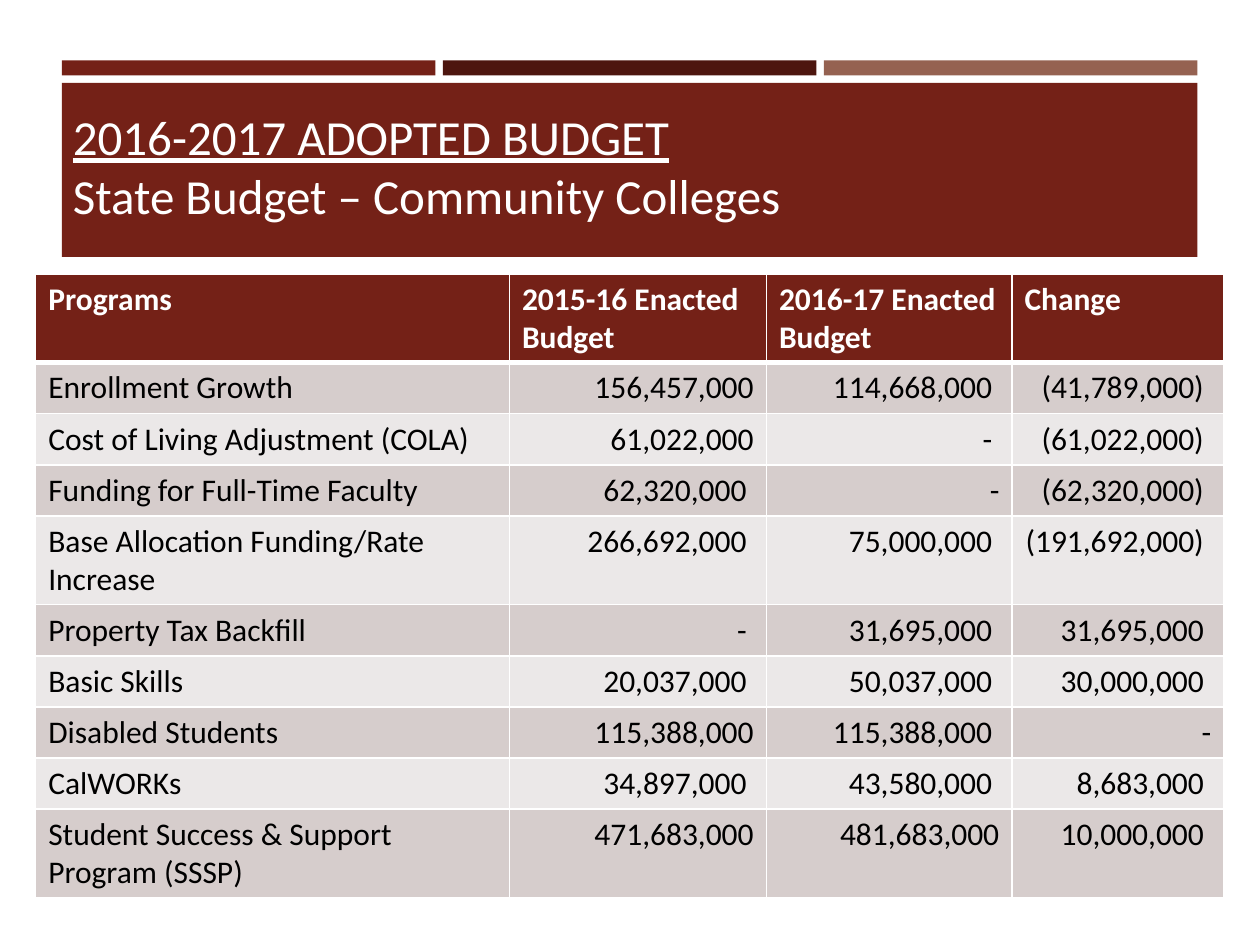
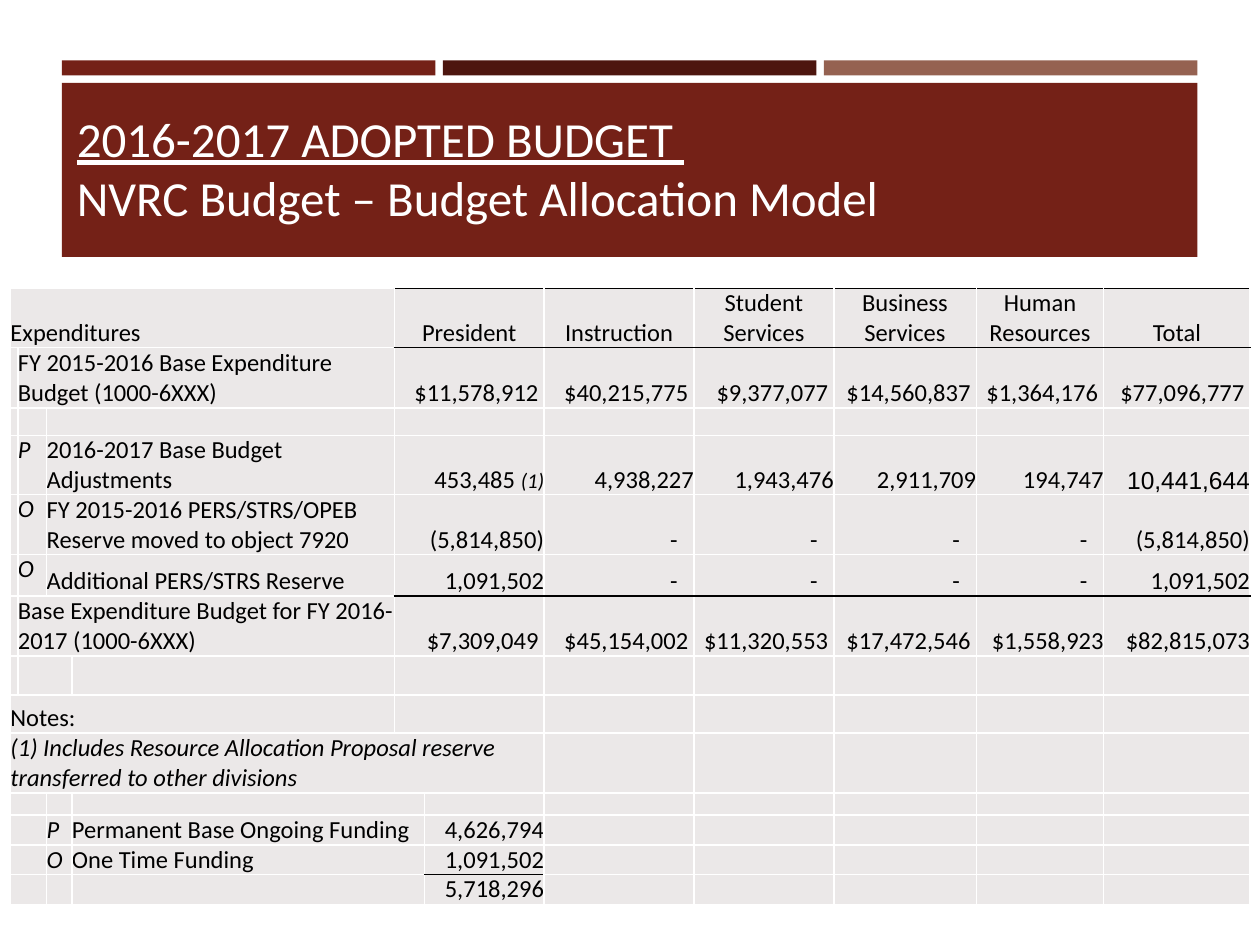
from dataclasses import dataclass
from lxml import etree
from pptx import Presentation
from pptx import util as u
from pptx.dml.color import RGBColor
from pptx.enum import shapes, text
from pptx.oxml.ns import qn

Cm, Pt = u.Cm, u.Pt


@dataclass(frozen=True)
class Theme:
    brick: str = "742117"
    dark: str = "4D160F"
    clay: str = "956251"
    band: str = "D6CDCC"
    pale: str = "EBE8E8"
    white: str = "FFFFFF"
    black: str = "000000"
    font: str = "Calibri"
    plain: str = "Arial"
    title: int = 28
    large: int = 18
    body: int = 14
    note: int = 12
    tiny: int = 10


T = Theme()
LEFT, RIGHT = text.PP_ALIGN.LEFT, text.PP_ALIGN.RIGHT
MID = text.PP_ALIGN.CENTER
TOP, BASE = text.MSO_ANCHOR.TOP, text.MSO_ANCHOR.BOTTOM
HEAD = "2016-2017 ADOPTED BUDGET"

STATE_COLS = (9.55, 5.18, 4.95, 4.27)
STATE = [
    ("Programs", "2015-16 Enacted Budget", "2016-17 Enacted Budget", "Change"),
    ("Enrollment Growth", "156,457,000", "114,668,000 ", "(41,789,000) "),
    ("Cost of Living Adjustment (COLA)", "61,022,000", "- ", "(61,022,000) "),
    ("Funding for Full-Time Faculty", "62,320,000 ", "-", "(62,320,000) "),
    ("Base Allocation Funding/Rate Increase",
     "266,692,000 ", "75,000,000 ", "(191,692,000) "),
    ("Property Tax Backfill", "- ", "31,695,000 ", "31,695,000 "),
    ("Basic Skills", "20,037,000 ", "50,037,000 ", "30,000,000 "),
    ("Disabled Students", "115,388,000", "115,388,000 ", "-"),
    ("CalWORKs", "34,897,000 ", "43,580,000 ", "8,683,000 "),
    ("Student Success & Support Program (SSSP)",
     "471,683,000", "481,683,000", "10,000,000 "),
]
STATE_TALL = (0, 4, 9)

MODEL_COLS = (0.15, 0.58, 0.51, 6.5, 0.61, 2.41, 3.02, 2.82, 2.87, 2.57, 2.95)
SUM, ITEM, KEY = (1, 3, 2), (1, 1, 2, 2), (2, 1, 2)
MODEL = [
    (1.19, (4, 2), ("Expenditures", "President", "Instruction",
                    "Student Services", "Business Services",
                    "Human Resources", "Total")),
    (1.21, SUM, ("", "FY 2015-2016 Base Expenditure Budget (1000-6XXX)",
                 "$11,578,912 ", "$40,215,775 ", "$9,377,077 ",
                 "$14,560,837 ", "$1,364,176 ", "$77,096,777 ")),
    (0.56, ITEM, ()),
    (1.19, ITEM, ("", "P", "2016-2017 Base Budget Adjustments", "453,485 ",
                  "4,938,227", "1,943,476", "2,911,709", "194,747",
                  "10,441,644")),
    (1.21, ITEM, ("", "O",
                  "FY 2015-2016 PERS/STRS/OPEB Reserve moved to object 7920",
                  "(5,814,850)", "-", "-", "-", "-", "(5,814,850)")),
    (0.83, ITEM, ("", "O", "Additional PERS/STRS Reserve",
                  "1,091,502", "-", "-", "-", "-", "1,091,502")),
    (1.21, SUM, ("", "Base Expenditure Budget for FY 2016-2017 (1000-6XXX)",
                 "$7,309,049 ", "$45,154,002 ", "$11,320,553 ",
                 "$17,472,546 ", "$1,558,923", "$82,815,073")),
    (0.79, (1, 2, 1, 2), ()),
    (0.77, (4, 2), ("Notes:",)),
    (1.21, (6,), ("(1) Includes Resource Allocation Proposal reserve "
                  "transferred to other divisions",)),
    (0.44, KEY, ()),
    (0.6, KEY, ("", "P", "Permanent Base Ongoing Funding", "4,626,794")),
    (0.6, KEY, ("", "O", "One Time Funding", "1,091,502")),
    (0.6, KEY, ("", "", "", "5,718,296")),
]
RULES = {0: range(4, 11), 1: range(4, 11), 6: range(4, 11), 13: (5,)}


def tint(fill, hue):
    fill.solid()
    fill.fore_color.rgb = RGBColor.from_string(hue)


def style(run, size, hue, bold=False, slant=False, font=T.font):
    run.font.name = font
    run.font.size = Pt(size)
    run.font.bold = bold
    run.font.italic = slant
    run.font.color.rgb = RGBColor.from_string(hue)


def block(slide, x, y, w, h, hue):
    box = slide.shapes.add_shape(
        shapes.MSO_SHAPE.RECTANGLE, Cm(x), Cm(y), Cm(w), Cm(h))
    box.shadow.inherit = False
    tint(box.fill, hue)
    box.line.fill.background()


def frame(slide):
    for i, hue in enumerate((T.brick, T.dark, T.clay)):
        block(slide, 1.25 + 7.68 * i, 1.22, 7.53, 0.3, hue)
    block(slide, 1.25, 1.67, 22.89, 3.51, T.brick)


def title(slide, x, y, head, line):
    box = slide.shapes.add_textbox(Cm(x), Cm(y), Cm(22.2), Cm(3))
    body = box.text_frame
    body.word_wrap = True
    body.vertical_anchor = BASE
    par = body.paragraphs[0]
    par.text = head + "\v" + line
    for run in par.runs:
        style(run, T.title, T.white)
    par.runs[0].font.underline = True


def grid(slide, x, y, cols, rows):
    item = slide.shapes.add_table(
        len(rows), len(cols), Cm(x), Cm(y), Cm(sum(cols)), Cm(sum(rows)))
    table = item.table
    table.first_row = table.horz_banding = False
    for col, wide in zip(table.columns, cols):
        col.width = Cm(wide)
    for row, high in zip(table.rows, rows):
        row.height = Cm(high)
    return table


def edge(cell, tag, hue, width):
    props = cell._tc.get_or_add_tcPr()
    line = etree.SubElement(props, qn("a:" + tag), w=str(Pt(width)))
    fill = etree.SubElement(line, qn("a:solidFill"))
    etree.SubElement(fill, qn("a:srgbClr"), val=hue)


def paint(cell, hue, top=(T.white, 1), base=(T.white, 1)):
    side = (T.white, 1)
    for tag, look in zip(("lnL", "lnR", "lnT", "lnB"),
                         (side, side, top, base)):
        edge(cell, tag, *look)
    tint(cell.fill, hue)


def write(cell, words, size, hue, align=LEFT, **looks):
    par = cell.text_frame.paragraphs[0]
    par.alignment = align
    if words:
        par.text = words
        style(par.runs[0], size, hue, **looks)
    else:
        etree.SubElement(par._p, qn("a:endParaRPr"), sz=str(T.tiny * 100))


def state(slide):
    highs = [1.79 if r in STATE_TALL else 1.03 for r in range(len(STATE))]
    table = grid(slide, 0.72, 5.52, STATE_COLS, highs)
    for r, row in enumerate(STATE):
        for c, words in enumerate(row):
            cell = table.cell(r, c)
            if r == 0:
                paint(cell, T.brick, base=(T.white, 3))
                write(cell, words, T.large, T.white, bold=True)
            else:
                top = (T.white, 3 if r == 1 else 1)
                paint(cell, T.band if r % 2 else T.pale, top=top)
                write(cell, words, T.large, T.black, RIGHT if c else LEFT)


def ruled(r, c):
    return (T.black if c in RULES.get(r, ()) else T.white, 1)


def fit(cell, r, c, words):
    mark = words in ("P", "O")
    cell.margin_left = cell.margin_top = cell.margin_bottom = 0
    cell.margin_right = Cm(0.33) if words == "-" else 0
    cell.vertical_anchor = TOP if mark and c == 1 else BASE
    align = LEFT if c < 4 else RIGHT if r else MID
    write(cell, words, T.body, T.black, align,
          slant=mark or words.startswith("(1)"),
          font=T.plain if words == "10,441,644" else T.font)


def model(slide):
    count = len(MODEL_COLS)
    table = grid(slide, 0.21, 5.82, MODEL_COLS, [row[0] for row in MODEL])
    for r, (high, spans, words) in enumerate(MODEL):
        for c in range(count):
            paint(table.cell(r, c), T.pale, ruled(r, c), ruled(r + 1, c))
        spans += (1,) * (count - sum(spans))
        words += ("",) * (len(spans) - len(words))
        c = 0
        for span, word in zip(spans, words):
            cell = table.cell(r, c)
            if span > 1:
                cell.merge(table.cell(r, c + span - 1))
            fit(cell, r, c, word)
            c += span
    ref = table.cell(3, 4).text_frame.paragraphs[0].add_run()
    ref.text = "(1)"
    style(ref, T.note, T.black, slant=True)


def main():
    deck = Presentation()
    deck.slide_width, deck.slide_height = Cm(25.4), Cm(19.05)
    blank = deck.slide_layouts[6]

    slide = deck.slides.add_slide(blank)
    frame(slide)
    title(slide, 1.22, 1.65, HEAD, "State Budget – Community Colleges")
    state(slide)

    slide = deck.slides.add_slide(blank)
    frame(slide)
    title(slide, 1.3, 1.68, HEAD + " ",
          "NVRC Budget – Budget Allocation Model")
    model(slide)

    deck.save("out.pptx")


if __name__ == "__main__":
    main()
